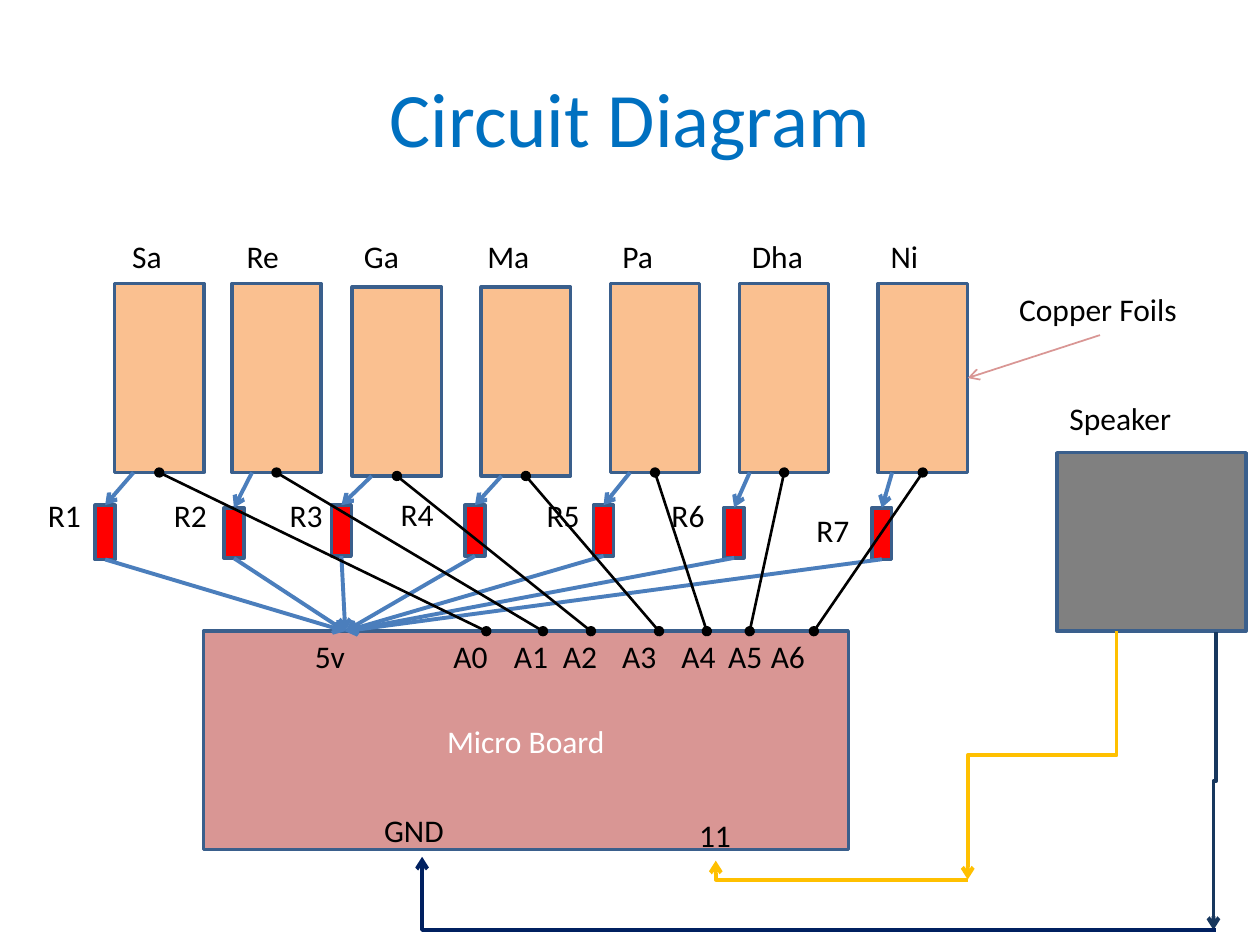
from typing import NamedTuple

from lxml import etree
from pptx import Presentation
from pptx.dml.color import RGBColor
from pptx.enum.shapes import MSO_CONNECTOR, MSO_SHAPE
from pptx.enum.text import MSO_ANCHOR, MSO_AUTO_SIZE, PP_ALIGN
from pptx.oxml.ns import qn
from pptx.util import Pt

RECT = MSO_SHAPE.RECTANGLE
STRAIGHT, ELBOW = MSO_CONNECTOR.STRAIGHT, MSO_CONNECTOR.ELBOW
CENTER, LEFT = PP_ALIGN.CENTER, PP_ALIGN.LEFT
MIDDLE = MSO_ANCHOR.MIDDLE
GROW = MSO_AUTO_SIZE.SHAPE_TO_FIT_TEXT

FOIL_W, FOIL_H = 51, 108
RES_W = 11.4
BOARD_TOP = 360.7
SUPPLY_X = 197.3
LABEL_H = 29


def rgb(value):
    return RGBColor.from_string(value)


class Key(NamedTuple):
    """One key: a foil, its resistor and its analog pin."""
    note: str
    note_x: float
    note_w: float
    foil_x: float
    foil_y: float
    tap_x: float     # where the resistor wire leaves the foil
    res_x: float
    res_y: float
    res_h: float
    res_label: tuple  # left, top, width
    pin_x: float
    pin_label: tuple  # left, width

    @property
    def foil_bottom(self):
        return self.foil_y + FOIL_H

    @property
    def res_mid(self):
        return self.res_x + RES_W / 2


KEYS = [
    Key("Sa", 68.4, 39.6, 65.5, 162, 76.3, 54.4, 288.7, 31, (20.2, 280.1, 44.6), 277.9, (252, 51.1)),
    Key("Re", 133.9, 50.4, 132.5, 162, 144, 128, 290.2, 28.8, (92.2, 280.1, 36.7), 310.3, (286.6, 48.2)),
    Key("Ga", 200.9, 64.8, 201.3, 164, 212.4, 189.4, 288.7, 29, (158.4, 280.1, 37.4), 337.7, (314.6, 45.4)),
    Key("Ma", 271.4, 67.7, 275, 164, 286.6, 265.7, 288.7, 29, (221.8, 279.4, 43.9), 376.6, (348.5, 55.4)),
    Key("Pa", 348.5, 73.4, 348.8, 162, 360, 339.2, 288.7, 29, (305.3, 280.1, 47.5), 403.9, (382.3, 42.5)),
    Key("Dha", 422.6, 74.2, 422.6, 162, 428.4, 413.8, 290, 28.8, (376.6, 280.1, 37.4), 428.4, (409, 38.9)),
    Key("Ni", 501.8, 41.8, 501.8, 162, 509.8, 498.2, 290.2, 29.4, (459.4, 288.7, 38.9), 465.1, (433.4, 62.6)),
]


class Diagram:
    font, size = "Calibri", 18
    outline, ink = "3A5F8C", "000000"

    def __init__(self, slide):
        self.s = slide

    def style(self, p, color, size=None, align=LEFT):
        p.alignment = align
        p.font.name = self.font
        p.font.size = Pt(size or self.size)
        p.font.color.rgb = rgb(color)

    def title(self, text, x, y, w, h, color):
        sp = self.s.shapes.title
        sp.left, sp.top, sp.width, sp.height = Pt(x), Pt(y), Pt(w), Pt(h)
        tf = sp.text_frame
        tf.text = text
        tf.vertical_anchor = MIDDLE
        self.style(tf.paragraphs[0], color, 44, CENTER)

    def box(self, x, y, w, h, fill, text=""):
        sp = self.s.shapes.add_shape(RECT, Pt(x), Pt(y), Pt(w), Pt(h))
        sp.shadow.inherit = False
        sp.fill.solid()
        sp.fill.fore_color.rgb = rgb(fill)
        sp.line.color.rgb = rgb(self.outline)
        sp.line.width = Pt(2)
        if text:
            tf = sp.text_frame
            tf.text = text
            tf.vertical_anchor = MIDDLE
            self.style(tf.paragraphs[0], "FFFFFF", align=CENTER)

    def label(self, text, x, y, w, wrap=True):
        sp = self.s.shapes.add_textbox(Pt(x), Pt(y), Pt(w), Pt(LABEL_H))
        tf = sp.text_frame
        tf.word_wrap = wrap
        tf.auto_size = GROW
        tf.text = text
        self.style(tf.paragraphs[0], self.ink)

    def line(self, x1, y1, x2, y2, color, width=2.25, head=None, tail="arrow", kind=STRAIGHT):
        c = self.s.shapes.add_connector(kind, Pt(x1), Pt(y1), Pt(x2), Pt(y2))
        c.line.color.rgb = rgb(color)
        c.line.width = Pt(width)
        ln = c.line._ln
        for tag, mark in (("a:headEnd", head), ("a:tailEnd", tail)):
            if mark:
                etree.SubElement(ln, qn(tag)).set("type", mark)
        etree.SubElement(c._element.spPr, qn("a:effectLst"))
        return c

    def elbow(self, x1, y1, x2, y2, color, preset, turn):
        """Bent connector, laid out unrotated about its centre, then turned."""
        w, h = abs(x2 - x1), abs(y2 - y1)
        if turn == 90:
            w, h = h, w
        left, top = (x1 + x2 - w) / 2, (y1 + y2 - h) / 2
        c = self.line(left, top, left + w, top + h, color, kind=ELBOW)
        spPr = c._element.spPr
        spPr.find(qn("a:xfrm")).set("rot", str(turn * 60000))
        spPr.find(qn("a:prstGeom")).set("prst", preset)


def main():
    prs = Presentation()
    prs.slide_width, prs.slide_height = Pt(720), Pt(540)
    d = Diagram(prs.slides.add_slide(prs.slide_layouts[5]))
    d.title("Circuit Diagram", 36, 21.6, 648, 90, "0070C0")

    # Foils and their notes
    for k in KEYS:
        d.box(k.foil_x, k.foil_y, FOIL_W, FOIL_H, "FAC090")
        d.label(k.note, k.note_x, 131.8, k.note_w)

    # Board with its pins, and speaker
    d.box(116.2, BOARD_TOP, 368.6, 124.8, "D99694", "Micro Board")
    d.box(604, 258.7, 108, 102, "808080")
    d.label("11", 392.4, 463, 33, wrap=False)
    d.label("GND", 212.4, 460, 56.9)
    d.label("5v", 172.8, BOARD_TOP, 48.2)
    for i, k in enumerate(KEYS):
        x, w = k.pin_label
        d.label(f"A{i}", x, BOARD_TOP, w)

    # Resistors, wired from the foils to the 5v pin
    for k in KEYS:
        d.box(k.res_x, k.res_y, RES_W, k.res_h, "FF0000")
    for i, k in enumerate(KEYS, 1):
        d.line(k.tap_x, k.foil_bottom, k.res_mid, k.res_y, "4B7EBC")
        d.line(k.res_mid, k.res_y + k.res_h, SUPPLY_X, BOARD_TOP, "4B7EBC")
        d.label(f"R{i}", *k.res_label)

    # Sense wires from the foils to the analog pins
    for k in KEYS:
        d.line(k.foil_x + FOIL_W / 2, k.foil_bottom, k.pin_x, BOARD_TOP,
               d.ink, 1.5, head="oval", tail="oval")

    # Speaker wires to pin 11 and to ground
    d.label("Speaker", 604, 224.6, 90)
    d.elbow(638, 360.7, 553, 502.6, "FFC000", "bentConnector3", 90)
    d.elbow(553, 502.6, 409, 491.8, "FFC000", "bentConnector2", 180)
    d.elbow(694.8, 361.4, 693.4, 531.4, "17375E", "bentConnector3", 90)
    d.elbow(694.8, 531.4, 241.2, 489.6, "002060", "bentConnector2", 180)

    # Callout for the foils
    d.label("Copper Foils", 575.3, 162, 105.8, wrap=False)
    d.line(628.6, 191.5, 553, 216, "D99694", 1)

    prs.save("out.pptx")


if __name__ == "__main__":
    main()
